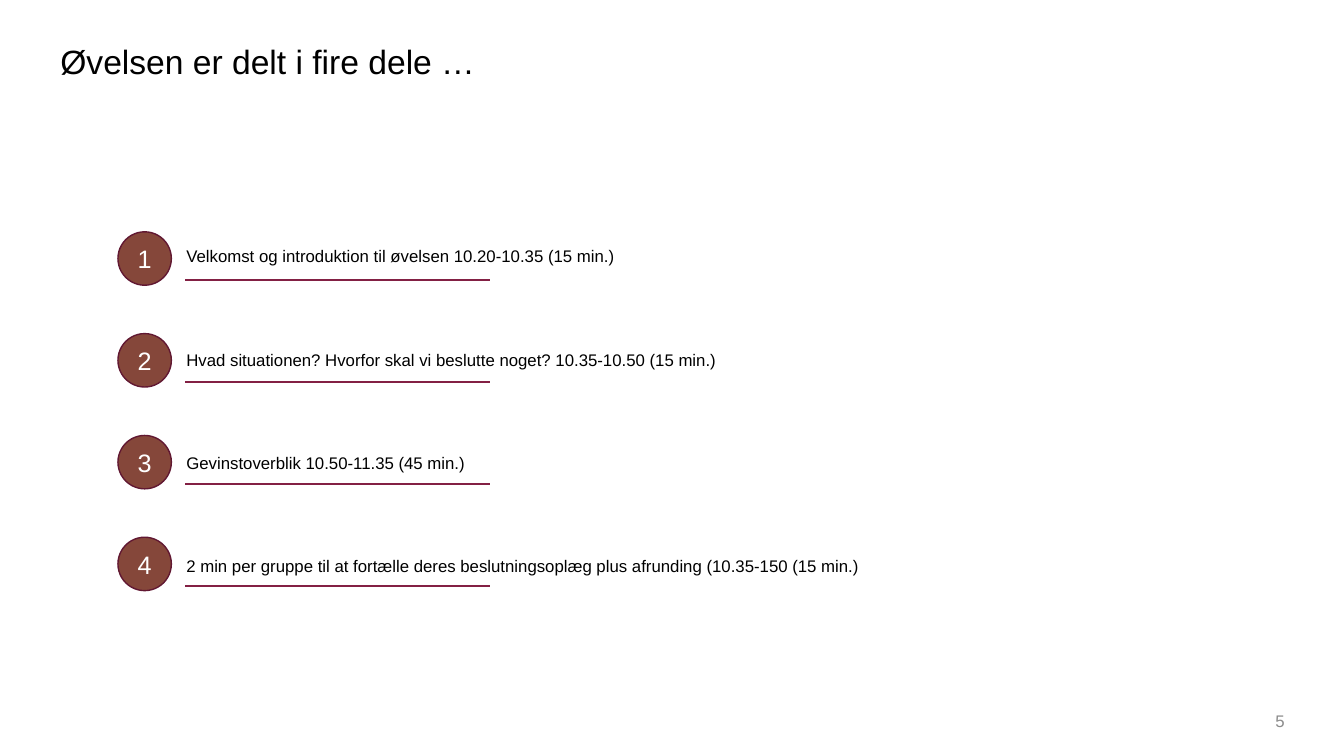
from dataclasses import dataclass

from lxml.etree import SubElement
from pptx import Presentation
from pptx.dml.color import RGBColor as Rgb
from pptx.enum.shapes import MSO_CONNECTOR as Connector, MSO_SHAPE as Shape
from pptx.enum.text import MSO_ANCHOR as Anchor, PP_ALIGN as Align
from pptx.oxml.ns import qn
from pptx.util import Inches, Pt


@dataclass(frozen=True)
class Theme:
    font: str = "Arial"
    ink: Rgb = Rgb(0x00, 0x00, 0x00)
    muted: Rgb = Rgb(0x8C, 0x8C, 0x8C)
    white: Rgb = Rgb(0xFF, 0xFF, 0xFF)
    badge: Rgb = Rgb(0x85, 0x47, 0x3A)
    badge_edge: Rgb = Rgb(0x61, 0x18, 0x32)
    rule: Rgb = Rgb(0x83, 0x20, 0x44)
    title_size: int = 24
    badge_size: int = 18
    body_size: int = 12


THEME = Theme()
PARTS = [
    "Velkomst og introduktion til øvelsen 10.20-10.35 (15 min.)",
    "Hvad situationen? Hvorfor skal vi beslutte noget? 10.35-10.50 (15 min.)",
    "Gevinstoverblik 10.50-11.35 (45 min.)",
    "2 min per gruppe til at fortælle deres beslutningsoplæg plus afrunding (10.35-150 (15 min.)",
]
ROW_PITCH = 1.01
BADGE_DIAMETER = 0.53


def apply(target, formats):
    for name, value in formats.items():
        setattr(target, name, value)


def write(frame, lines, size, color, frame_format=None, para_format=None, gap=0):
    apply(frame, {"word_wrap": True, **(frame_format or {})})
    for index, line in enumerate(lines):
        para = frame.add_paragraph() if index else frame.paragraphs[0]
        apply(para, para_format or {})
        if index:
            para.space_before = Pt(gap)
        span = para.add_run()
        span.text = line
        apply(span.font, {"name": THEME.font, "size": Pt(size)})
        span.font.color.rgb = color


def add_text(page, box, lines, size, color, **formats):
    text_box = page.shapes.add_textbox(*map(Inches, box))
    write(text_box.text_frame, lines, size, color, **formats)


def add_title(page, box):
    add_text(page, box, ["Øvelsen er delt i fire dele …"], THEME.title_size, THEME.ink,
             para_format={"line_spacing": 0.9})


def add_badge(page, left, top, label):
    badge = page.shapes.add_shape(
        Shape.OVAL, *map(Inches, (left, top, BADGE_DIAMETER, BADGE_DIAMETER)))
    badge.shadow.inherit = False
    badge.fill.solid()
    badge.fill.fore_color.rgb = THEME.badge
    badge.line.color.rgb = THEME.badge_edge
    badge.line.width = Pt(1)
    margins = dict.fromkeys(("margin_left", "margin_right", "margin_top", "margin_bottom"), 0)
    write(badge.text_frame, [label], THEME.badge_size, THEME.white,
          frame_format={"vertical_anchor": Anchor.MIDDLE, **margins},
          para_format={"alignment": Align.CENTER})


def add_rule(page, left, top, width):
    rule = page.shapes.add_connector(
        Connector.STRAIGHT, *map(Inches, (left, top, left + width, top)))
    rule.line.color.rgb = THEME.rule
    rule.line.width = Pt(1.5)
    SubElement(rule._element.spPr, qn("a:effectLst"))


def add_agenda(page, box):
    left, top, width, height = box
    add_text(page, (left + 0.58, top + 0.09, width - 0.58, height - 0.09), PARTS,
             THEME.body_size, THEME.ink, gap=59.4)
    for index in range(len(PARTS)):
        row_top = top + index * ROW_PITCH
        add_rule(page, left + 0.67, row_top + 0.48, 3.02)
        add_badge(page, left, row_top, str(index + 1))


def add_page_number(page, box):
    add_text(page, box, ["5"], THEME.body_size, THEME.muted,
             frame_format={"vertical_anchor": Anchor.MIDDLE},
             para_format={"alignment": Align.RIGHT})


def main():
    deck = Presentation()
    apply(deck, {"slide_width": Inches(13.33), "slide_height": Inches(7.5)})
    page = deck.slides.add_slide(deck.slide_layouts[6])
    add_title(page, (0.5, 0.4, 11.09, 0.93))
    add_agenda(page, (1.17, 2.3, 7.72, 4.51))
    add_page_number(page, (11.34, 6.95, 1.5, 0.4))
    deck.save("out.pptx")


if __name__ == "__main__":
    main()
